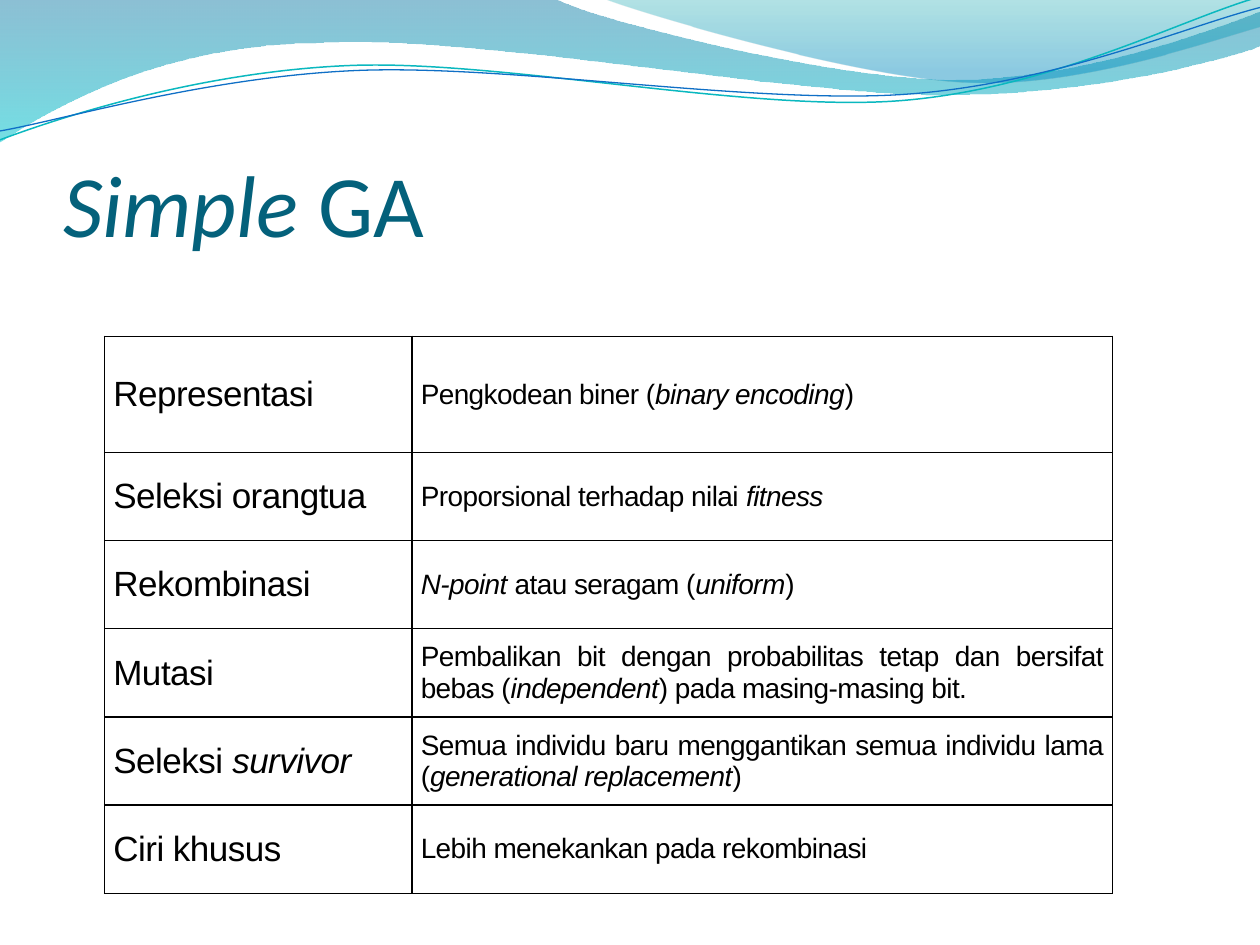
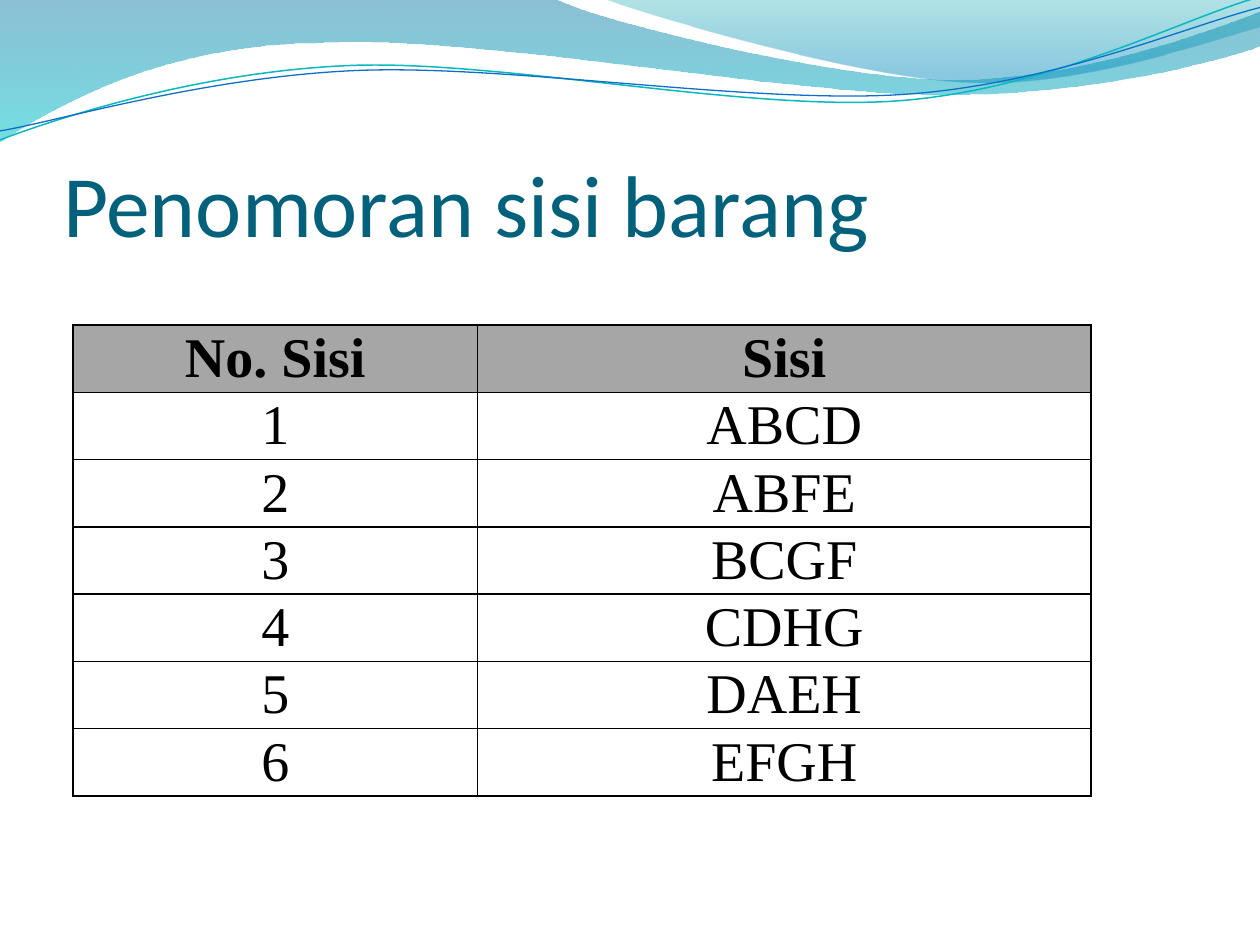
"""Builds two slides on genetic algorithms, each with a wave header, a title and a table."""
from math import cos, radians, sin

from lxml import etree
from pptx import Presentation
from pptx.dml.color import RGBColor
from pptx.enum.text import MSO_ANCHOR, PP_ALIGN
from pptx.oxml.ns import qn
from pptx.util import Inches, Pt

MIDDLE, BOTTOM = MSO_ANCHOR.MIDDLE, MSO_ANCHOR.BOTTOM
JUSTIFY, CENTER = PP_ALIGN.JUSTIFY, PP_ALIGN.CENTER

BLACK = RGBColor(0x00, 0x00, 0x00)
GREY = RGBColor(0xA6, 0xA6, 0xA6)
TITLE_TEAL = RGBColor(0x04, 0x61, 0x7B)
DEEP_BLUE = RGBColor(0x00, 0x74, 0xA1)
CYAN = RGBColor(0x00, 0xC6, 0xCF)
SEA_GREEN = RGBColor(0x00, 0xA1, 0xA9)
SKY_BLUE = RGBColor(0x00, 0x8B, 0xBF)
LINE_TEAL = RGBColor(0x0A, 0xB8, 0xBF)
LINE_BLUE = RGBColor(0x0F, 0x6F, 0xC6)

# In all texts, words between asterisks are italic.
SIMPLE_GA = [
    ("Representasi", "Pengkodean biner (*binary encoding*)"),
    ("Seleksi orangtua", "Proporsional terhadap nilai *fitness*"),
    ("Rekombinasi", "*N-point* atau seragam (*uniform*)"),
    ("Mutasi", "Pembalikan bit dengan probabilitas tetap dan bersifat bebas "
               "(*independent*) pada masing-masing bit."),
    ("Seleksi *survivor*", "Semua individu baru menggantikan semua individu lama "
                           "(*generational replacement*)"),
    ("Ciri khusus", "Lebih menekankan pada rekombinasi"),
]
SIDES = ["ABCD", "ABFE", "BCGF", "CDHG", "DAEH", "EFGH"]
SIDE_ROWS = [("No. Sisi", "Sisi")] + [(str(n), side) for n, side in enumerate(SIDES, 1)]

# Each outline is a start point, then line ends (2 numbers) or Bezier curves (6 numbers).
BANDS = [
    ([(0, -0.01), (4.4, -0.01), (4.76, 0.17, 6.64, 0.63, 7.58, 0.63),
      (8.53, 0.63, 9.58, 0.26, 10, 0.09), (10.01, 0.36),
      (9.83, 0.44, 8.7, 0.76, 7.46, 0.75), (6.22, 0.75, 3.82, 0.28, 2.57, 0.34),
      (1.29, 0.35, 0.46, 0.83, -0.01, 1.13), (0, -0.01)],
     [(0, DEEP_BLUE, 45), (1, CYAN, 55)]),
    ([(4.79, -0.01), (5.09, 0.11, 6.82, 0.62, 7.69, 0.65),
      (8.56, 0.69, 9.61, 0.32, 10, 0.21), (10, 0), (4.79, -0.01)],
     [(0, SEA_GREEN, 30), (0.8, SKY_BLUE, 45)]),
]
# Outline as seen after the tilt, centre of the tilt, colour and width.
WAVES = [
    ([(0, 1.11), (0.48, 0.93, 1.58, 0.57, 2.77, 0.52),
      (3.95, 0.47, 5.93, 0.89, 7.13, 0.8), (8.33, 0.71, 9.38, 0.15, 9.98, -0.02)],
     (4.99, 0.58), LINE_TEAL, 0.85),
    ([(0, 1.04), (0.47, 0.96, 1.64, 0.61, 2.83, 0.56),
      (4.03, 0.51, 5.97, 0.83, 7.17, 0.75), (8.36, 0.67, 9.41, 0.21, 10, 0.06)],
     (5, 0.59), LINE_BLUE, 0.75),
]
TILT = 357.3


def turn_back(point, center):
    """Undo the tilt of a point around a centre."""
    a = radians(-TILT)
    dx, dy = point[0] - center[0], point[1] - center[1]
    return (center[0] + dx * cos(a) - dy * sin(a), center[1] + dx * sin(a) + dy * cos(a))


def add_outline(slide, outline, close, center=None):
    points = [pt for part in outline for pt in zip(part[::2], part[1::2])]
    if center:
        points = [turn_back(pt, center) for pt in points]
    points = [(Inches(x), Inches(y)) for x, y in points]
    builder = slide.shapes.build_freeform(*points[0])
    builder.add_line_segments(points[1:], close=close)
    s = builder.convert_to_shape()
    s.shadow.inherit = False
    lines = iter(list(s._element.spPr.iter(qn("a:lnTo"))))
    for part in outline[1:]:
        steps = [next(lines) for _ in range(len(part) // 2)]
        if len(steps) == 3:
            curve = etree.Element(qn("a:cubicBezTo"))
            steps[0].addprevious(curve)
            for step in steps:
                curve.append(step[0])
                step.getparent().remove(step)
    return s


def add_header(slide):
    for outline, stops in BANDS:
        s = add_outline(slide, outline, True)
        s.fill.gradient()
        s.fill.gradient_angle = 270
        for stop, (position, color, _) in zip(s.fill.gradient_stops, stops):
            stop.position, stop.color.rgb = position, color
        colors = s._element.spPr.iter(qn("a:srgbClr"))
        for color, (_, _, opacity) in zip(colors, stops):
            etree.SubElement(color, qn("a:alpha"), val=str(opacity * 1000))
        s.line.fill.background()
    for outline, center, color, width in WAVES:
        s = add_outline(slide, outline, False, center)
        s.rotation = TILT
        s.fill.background()
        s.line.color.rgb, s.line.width = color, Pt(width)


def add_runs(p, text, font, size, color, bold=False, spacing=0):
    for i, piece in enumerate(text.split("*")):
        if not piece:
            continue
        r = p.add_run()
        r.text = piece
        r.font.name, r.font.size, r.font.color.rgb = font, Pt(size), color
        r.font.bold, r.font.italic = bold, i % 2 == 1
        if spacing:
            r.font._element.set("spc", str(spacing))


def add_title(slide, text):
    tf = slide.shapes.add_textbox(Inches(0.5), Inches(0.77), Inches(9.08), Inches(1.25)).text_frame
    tf.word_wrap, tf.vertical_anchor = True, BOTTOM
    tf.margin_left = tf.margin_right = tf.margin_bottom = 0
    tf.margin_top = Inches(0.05)
    add_runs(tf.paragraphs[0], text, "Calibri", 50, TITLE_TEAL)


def add_borders(cell):
    for side in ("a:lnL", "a:lnR", "a:lnT", "a:lnB"):
        ln = etree.SubElement(cell._tc.get_or_add_tcPr(), qn(side), w=str(Pt(1)))
        fill = etree.SubElement(ln, qn("a:solidFill"))
        etree.SubElement(fill, qn("a:srgbClr"), val=str(BLACK))


def add_table(slide, rows, left, top, widths, heights, total_height, font, sizes, align,
              header=False, after=0, spacing=0):
    frame = slide.shapes.add_table(
        len(rows), len(widths), Inches(left), Inches(top),
        Inches(sum(widths)), Inches(total_height))
    table = frame.table
    table.first_row = table.horz_banding = False
    for column, width in zip(table.columns, widths):
        column.width = Inches(width)
    for i, (row, height) in enumerate(zip(rows, heights)):
        table.rows[i].height = Inches(height)
        is_header = header and i == 0
        for j, text in enumerate(row):
            cell = table.cell(i, j)
            cell.vertical_anchor = MIDDLE
            cell.margin_left = cell.margin_right = Inches(0.07)
            cell.margin_top = cell.margin_bottom = 0
            add_borders(cell)
            if is_header:
                cell.fill.solid()
                cell.fill.fore_color.rgb = GREY
            else:
                cell.fill.background()
            p = cell.text_frame.paragraphs[0]
            p.alignment = align
            if after:
                p.space_after = Pt(after)
            add_runs(p, text, font, sizes[j], BLACK, is_header, spacing)
    frame.height = Inches(total_height)


def add_slide(prs, title):
    slide = prs.slides.add_slide(prs.slide_layouts[6])
    add_header(slide)
    add_title(slide, title)
    return slide


def main():
    prs = Presentation()
    prs.slide_width, prs.slide_height = Inches(10), Inches(7.5)
    add_table(add_slide(prs, "*Simple* GA"), SIMPLE_GA, 0.83, 2.67,
              [2.44, 5.56], [0.92] + [0.7] * 5, 4.42, "Arial", [20, 16], JUSTIFY,
              after=6, spacing=-30)
    add_table(add_slide(prs, "Penomoran sisi barang"), SIDE_ROWS, 0.58, 2.58,
              [3.21, 4.87], [0.46] * len(SIDE_ROWS), 3.73, "Times New Roman", [32, 32], CENTER,
              header=True)
    prs.save("out.pptx")


if __name__ == "__main__":
    main()
